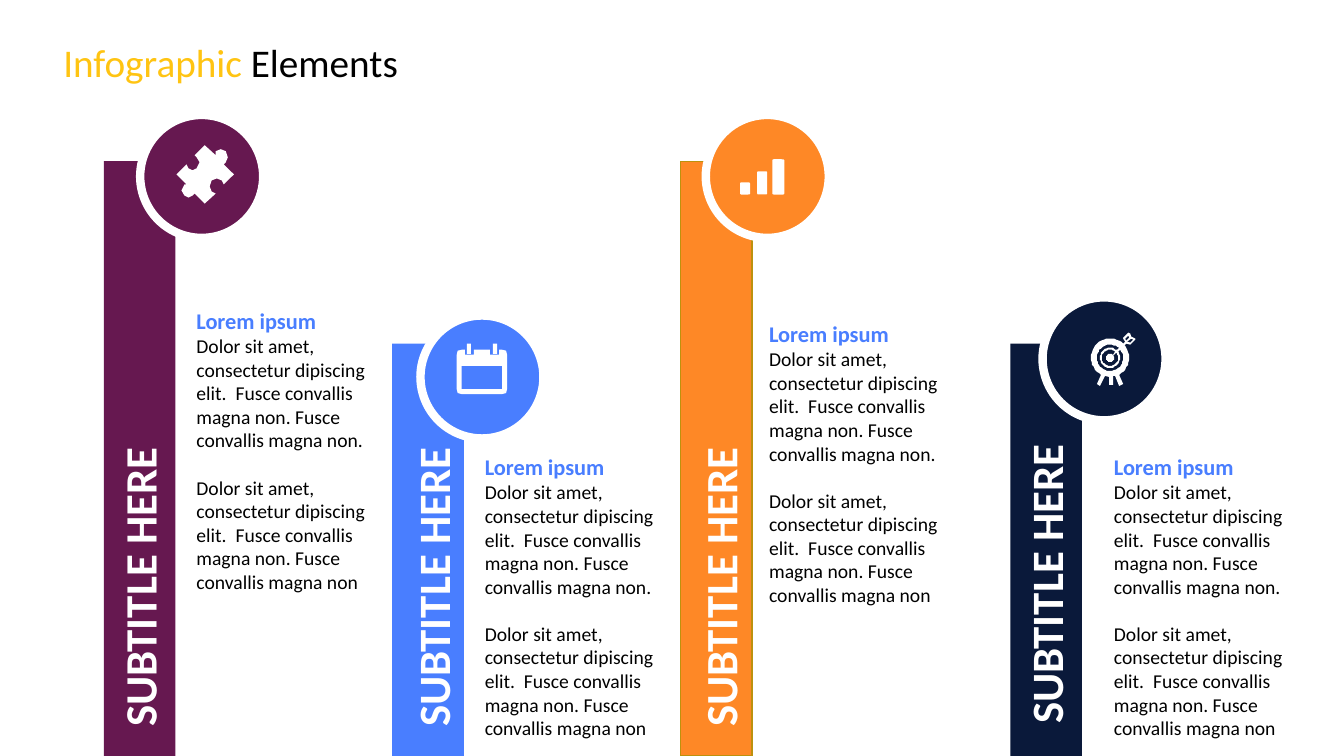
import math
import pptx
import pptx.util
import pptx.dml.color
import pptx.enum.shapes
import pptx.enum.text

PX = 9144  # EMU per px, 100 px to the inch
COLORS = {
    "purple": "661850", "blue": "497EFF", "orange": "FE8826", "navy": "0A193A",
    "gold": "FFC412", "edge": "BD910D", "white": "FFFFFF", "black": "000000",
}
COLORS = {name: pptx.dml.color.RGBColor.from_string(value) for name, value in COLORS.items()}
SHAPES = pptx.enum.shapes.MSO_SHAPE

presentation = pptx.Presentation()
presentation.slide_width = 1333 * PX
presentation.slide_height = 750 * PX
slide = presentation.slides.add_slide(presentation.slide_layouts[6])


def paint(shape, color, line=None, width=1):
    shape.shadow.inherit = False
    shape.fill.solid()
    shape.fill.fore_color.rgb = COLORS[color]
    if line:
        shape.line.color.rgb = COLORS[line]
        shape.line.width = pptx.util.Pt(width)
    else:
        shape.line.fill.background()


def target_arc(radius, start, end):
    """Points on a circle around the bullseye, in steps of about 8 degrees."""
    steps = math.ceil(abs(end - start) / 8)
    angles = [math.radians(start + (end - start) * i / steps) for i in range(steps + 1)]
    return [(1101 + radius * math.cos(a), 355 + radius * math.sin(a)) for a in angles]


# Per column: colour, bar left and top, bar line, circle left and top,
# body left and top, subtitle left and top
columns = [
    ("purple", 103, 160, None, 139, 114, 185, 300, -61, 500),
    ("blue", 389, 341, None, 417, 313, 471, 445, 230, 500),
    ("orange", 675, 160, "edge", 700, 114, 753, 313, 515, 500),
    ("navy", 1002, 341, None, 1034, 295, 1095, 445, 838, 497),
]

# Bars with their circles
for color, bar_left, bar_top, edge, circle_left, circle_top, *_ in columns:
    bar = slide.shapes.add_shape(
        SHAPES.RECTANGLE, bar_left * PX, bar_top * PX, 71 * PX, (750 - bar_top) * PX)
    paint(bar, color, edge)
    circle = slide.shapes.add_shape(
        SHAPES.OVAL, circle_left * PX, circle_top * PX, 122 * PX, 122 * PX)
    paint(circle, color, "white", 6)

# Body texts and vertical subtitles
sentence = "Dolor sit amet, consectetur dipiscing elit.  Fusce convallis magna non. Fusce convallis magna non"
body_lines = [
    ("Lorem ipsum", 16, "blue", True, 0),
    (sentence + ".", 14, "black", False, 0),
    (sentence, 14, "black", False, 17),
]
for *_, body_left, body_top, subtitle_left, subtitle_top in columns:
    body = slide.shapes.add_textbox(body_left * PX, body_top * PX, 194 * PX, 296 * PX)
    body.text_frame.word_wrap = True
    for index, (text, size, color, bold, gap) in enumerate(body_lines):
        paragraph = body.text_frame.add_paragraph() if index else body.text_frame.paragraphs[0]
        paragraph.text = text
        if gap:
            paragraph.space_before = pptx.util.Pt(gap)
        paragraph.font.name = "Calibri"
        paragraph.font.size = pptx.util.Pt(size)
        paragraph.font.bold = bold
        paragraph.font.color.rgb = COLORS[color]

    subtitle = slide.shapes.add_textbox(subtitle_left * PX, subtitle_top * PX, 398 * PX, 64 * PX)
    subtitle.rotation = 270
    subtitle.text_frame.word_wrap = True
    paragraph = subtitle.text_frame.paragraphs[0]
    paragraph.text = "SUBTITLE HERE"
    paragraph.font.name = "Calibri"
    paragraph.font.size = pptx.util.Pt(32)
    paragraph.font.bold = True
    paragraph.font.color.rgb = COLORS["white"]

# Title
title = slide.shapes.add_textbox(53 * PX, 33 * PX, 866 * PX, 57 * PX)
title.text_frame.word_wrap = True
paragraph = title.text_frame.paragraphs[0]
paragraph.font.name = "Calibri"
paragraph.font.size = pptx.util.Pt(28)
for text, color in [("Infographic ", "gold"), ("Elements", "black")]:
    run = paragraph.add_run()
    run.text = text
    run.font.color.rgb = COLORS[color]

# Icon outlines: the first contour is the body, later ones are holes or loose parts
puzzle = [[
    (214, 150), (214, 154), (203, 144), (193, 154), (195, 156), (198, 161), (195, 167),
    (191, 169), (187, 167), (185, 163), (175, 173), (185, 183), (183, 183), (180, 189),
    (183, 194), (187, 196), (191, 194), (193, 192), (203, 202), (214, 192), (210, 190),
    (208, 185), (210, 179), (215, 177), (220, 179), (222, 183), (232, 173), (222, 163),
    (224, 161), (226, 156), (224, 150), (219, 148),
]]
calendar = [
    [(498, 347), (495, 347), (495, 352), (486, 352), (486, 347), (470, 347), (470, 352),
     (461, 352), (461, 347), (458, 347), (454, 348), (453, 352), (453, 386), (454, 390),
     (458, 391), (498, 391), (502, 390), (503, 386), (503, 352), (502, 348)],
    [(458, 363), (498, 363), (498, 386), (458, 386)],
]
for left in (463, 489):
    calendar.append([(left, 341), (left + 4, 341), (left + 4, 351), (left, 351)])
arrow = [(1115, 343), (1117, 341), (1121, 342), (1126, 337), (1126, 336), (1122, 334),
         (1121, 331), (1119, 330), (1114, 335), (1114, 336), (1116, 339), (1114, 341)]
legs = [(1088, 381), (1091, 383), (1096, 373), (1100, 374), (1100, 382), (1104, 382),
        (1104, 373), (1106, 373), (1110, 383), (1114, 381)]
target = [
    arrow + target_arc(19, -47, -241) + legs + target_arc(19, 61, -40),
    [(1116, 336), (1119, 333), (1120, 335), (1117, 338)],
    [(1121, 340), (1118, 339), (1122, 336), (1124, 337)],
]
for outer, inner in [(13, 10), (8, 4)]:
    target.append(target_arc(outer, -37, 311) + target_arc(inner, 311, -37))

for contours in (puzzle, calendar, target):
    builder = slide.shapes.build_freeform(*contours[0][0], scale=PX)
    for index, contour in enumerate(contours):
        if index:
            builder.move_to(*contour[0])
        builder.add_line_segments(contour[1:], close=True)
    paint(builder.convert_to_shape(), "white")

# Bar icon
for left, top, width in [(734, 181, 10), (751, 170, 10), (766, 158, 12)]:
    icon_bar = slide.shapes.add_shape(
        SHAPES.ROUNDED_RECTANGLE, left * PX, top * PX, width * PX, (193 - top) * PX)
    icon_bar.adjustments[0] = 0.12
    paint(icon_bar, "white")

presentation.save("out.pptx")
